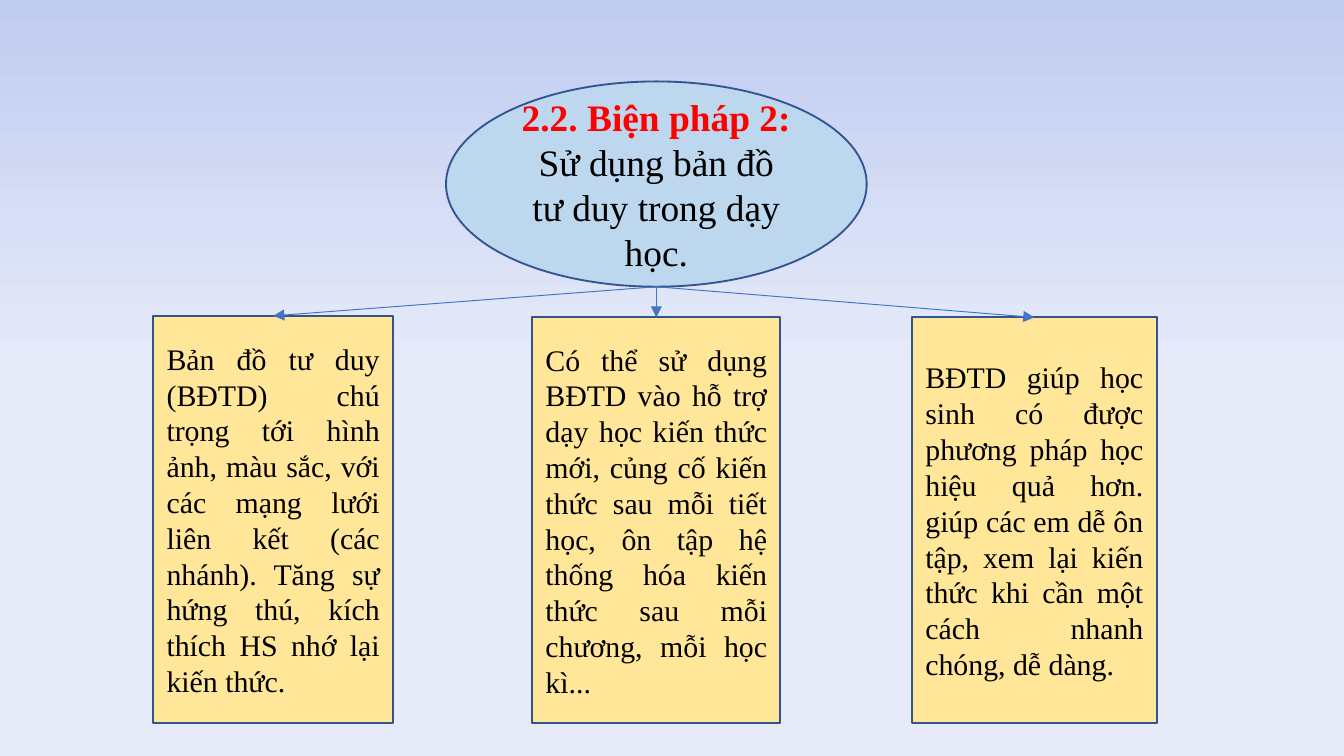
"""Build a slide on mind maps: one topic oval with arrows to three text boxes."""
import dataclasses
import typing

import lxml.etree
import pptx
import pptx.dml.color
import pptx.enum.dml
import pptx.enum.shapes
import pptx.enum.text
import pptx.oxml.ns
import pptx.util

Cm = pptx.util.Cm
Pt = pptx.util.Pt
Kind = pptx.enum.shapes.MSO_SHAPE
Align = pptx.enum.text.PP_ALIGN


@dataclasses.dataclass(frozen=True)
class Theme:
    font: str = "Times New Roman"
    top: str = "C0CBF0"
    base: str = "E7EBF9"
    oval: str = "BDD7EE"
    box: str = "FFE699"
    edge: str = "325491"
    arrow: str = "4472C4"
    title: str = "FF0000"
    text: str = "000000"
    large: int = 20
    small: int = 16


@dataclasses.dataclass(frozen=True)
class Run:
    text: str
    size: int
    color: str
    bold: bool = False


@dataclasses.dataclass(frozen=True)
class Node:
    kind: typing.Any
    left: float
    top: float
    width: float
    height: float
    fill: str
    align: typing.Any
    runs: tuple[Run, ...]


THEME = Theme()
FLOOR = 13.67

TOPIC = Node(Kind.OVAL, 8.43, 1.54, 7.95, 3.88, THEME.oval, Align.CENTER, (
    Run("2.2. Biện pháp 2: ", THEME.large, THEME.title, True),
    Run("Sử dụng bản đồ tư duy trong dạy học.", THEME.large, THEME.text),
))

BOXES = [
    Node(Kind.RECTANGLE, left, top, width, FLOOR - top, THEME.box, Align.JUSTIFY,
         (Run(text, THEME.small, THEME.text),))
    for left, top, width, text in (
        (2.9, 5.97, 4.53,
         "Bản đồ tư duy (BĐTD) chú trọng tới hình ảnh, màu sắc, với các mạng lưới "
         "liên kết (các nhánh). Tăng sự hứng thú, kích thích HS nhớ lại kiến thức."),
        (10.06, 6, 4.69,
         "Có thể sử dụng BĐTD vào hỗ trợ dạy học kiến thức mới, củng cố kiến thức sau "
         "mỗi tiết học, ôn tập hệ thống hóa kiến thức sau mỗi chương, mỗi học kì..."),
        (17.24, 6, 4.62,
         "BĐTD giúp học sinh có được phương pháp học hiệu quả hơn. giúp các em dễ ôn "
         "tập, xem lại kiến thức khi cần một cách nhanh chóng, dễ dàng."),
    )
]


def tint(code: str) -> pptx.dml.color.RGBColor:
    """Turn a hex code into a colour."""
    return pptx.dml.color.RGBColor.from_string(code)


def shade(slide: typing.Any) -> None:
    """Fill the slide with a gradient from the top to the middle."""
    fill = slide.background.fill
    fill.gradient()
    fill.gradient_angle = 270
    for stop, place, code in zip(fill.gradient_stops, (0, 0.5), (THEME.top, THEME.base)):
        stop.position = place
        stop.color.rgb = tint(code)


def draw(slide: typing.Any, node: Node) -> typing.Any:
    """Draw a node with its text and return the shape."""
    shape = slide.shapes.add_shape(
        node.kind, Cm(node.left), Cm(node.top), Cm(node.width), Cm(node.height))
    shape.shadow.inherit = False
    shape.fill.solid()
    shape.fill.fore_color.rgb = tint(node.fill)
    shape.line.color.rgb = tint(THEME.edge)
    shape.line.width = Pt(1)
    frame = shape.text_frame
    frame.word_wrap = True
    frame.vertical_anchor = pptx.enum.text.MSO_ANCHOR.MIDDLE
    para = frame.paragraphs[0]
    para.alignment = node.align
    for part in node.runs:
        run = para.add_run()
        run.text = part.text
        run.font.name = THEME.font
        run.font.size = Pt(part.size)
        run.font.bold = part.bold
        run.font.color.rgb = tint(part.color)
    return shape


def link(slide: typing.Any, start: Node, goal: typing.Any) -> None:
    """Draw an arrow from the foot of a node to the top of a shape."""
    x, y = Cm(start.left + start.width / 2), Cm(start.top + start.height)
    line = slide.shapes.add_connector(
        pptx.enum.shapes.MSO_CONNECTOR.STRAIGHT, x, y, x, y)
    line.end_connect(goal, 0)
    line.line.color.rgb = tint(THEME.arrow)
    line.line.width = Pt(0.5)
    name = pptx.oxml.ns.qn
    lxml.etree.SubElement(line.line._get_or_add_ln(), name("a:tailEnd"), type="triangle")
    lxml.etree.SubElement(line._element.spPr, name("a:effectLst"))


def main() -> None:
    """Build and save the slide."""
    deck = pptx.Presentation()
    deck.slide_width, deck.slide_height = Cm(25.4), Cm(14.29)
    slide = deck.slides.add_slide(deck.slide_layouts[6])
    shade(slide)
    draw(slide, TOPIC)
    goals = [draw(slide, box) for box in BOXES]
    for goal in goals:
        link(slide, TOPIC, goal)
    deck.save("out.pptx")


if __name__ == "__main__":
    main()
